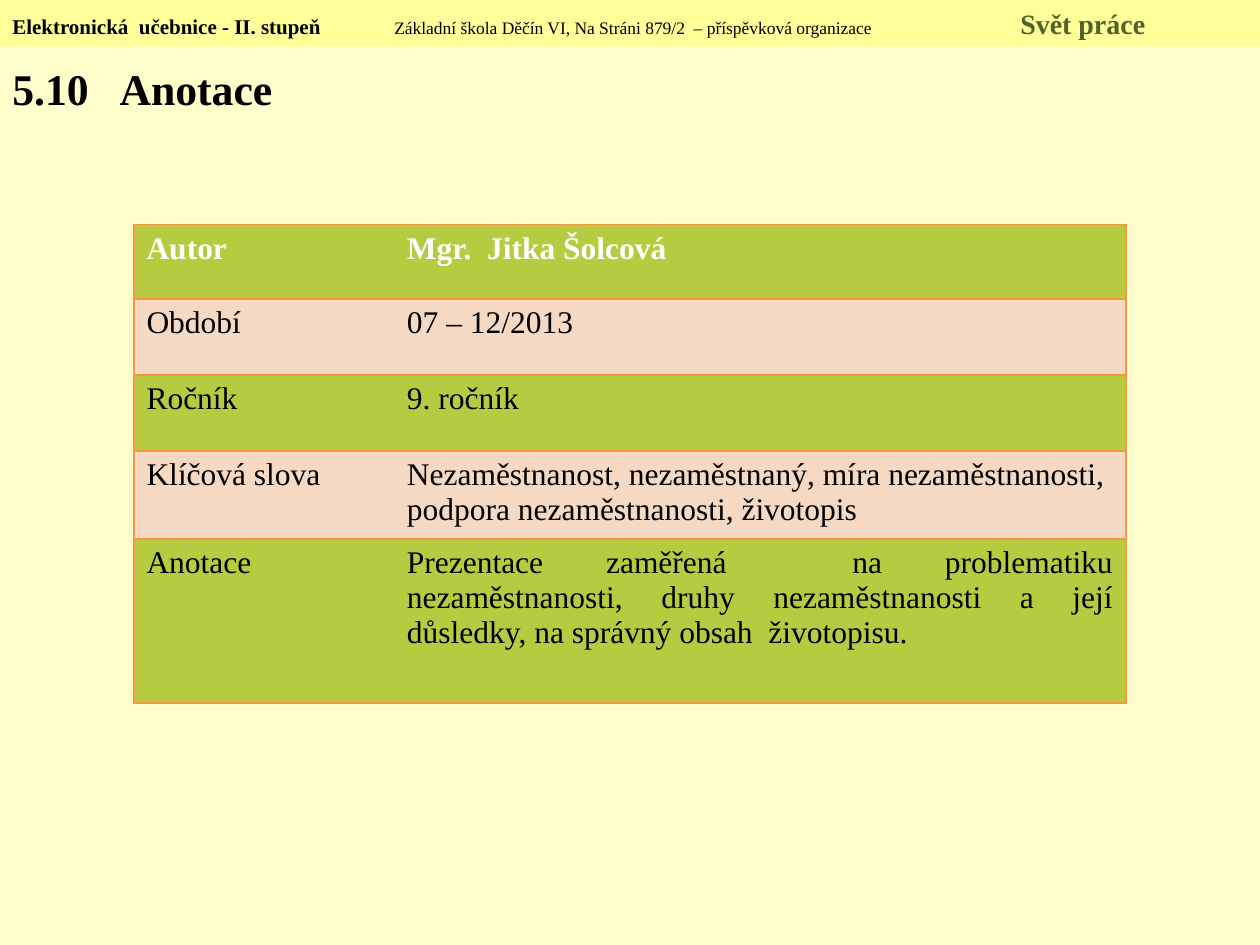
from lxml.etree import SubElement
from pptx import Presentation
from pptx.dml.color import RGBColor
from pptx.enum.shapes import MSO_SHAPE as Shape
from pptx.enum.text import MSO_ANCHOR as Anchor, PP_ALIGN as Align
from pptx.oxml.ns import qn
from pptx.util import Cm, Pt

COLORS = {
    "page": "FFFFCC", "band": "FFFF99", "text": "000000", "subject": "4F6228",
    "header": "FFFFFF", "green": "B7CB41", "peach": "F5D9C3", "border": "F79646",
}
FONT = "Times New Roman"
ROWS = [
    ("Autor", "Mgr.  Jitka Šolcová", 1.5),
    ("Období", "07 – 12/2013", 1.53),
    ("Ročník", "9. ročník", 1.53),
    ("Klíčová slova", "Nezaměstnanost, nezaměstnaný, míra nezaměstnanosti, "
     "podpora nezaměstnanosti, životopis", 1.78),
    ("Anotace", "Prezentace zaměřená  na problematiku nezaměstnanosti, druhy "
     "nezaměstnanosti a její důsledky, na správný obsah  životopisu.", 3.3),
]


def color(name):
    """Return the named colour."""
    return RGBColor.from_string(COLORS[name])


def add_span(para, text, size, bold=False, shade="text"):
    """Append one formatted run to a paragraph."""
    span = para.add_run()
    span.text = text
    span.font.name = FONT
    span.font.size = Pt(size)
    span.font.bold = bold
    span.font.color.rgb = color(shade)


def add_tabs(para, *stops):
    """Give a paragraph left tab stops, in centimetres."""
    tabs = SubElement(para._p.get_or_add_pPr(), qn("a:tabLst"))
    for stop in stops:
        SubElement(tabs, qn("a:tab"), pos=str(Cm(stop)), algn="l")


def add_header(page, left, top, width, height):
    """Draw the band with the book, school and subject."""
    band = page.shapes.add_shape(Shape.RECTANGLE, Cm(left), Cm(top), Cm(width), Cm(height))
    band.shadow.inherit = False
    band.fill.solid()
    band.fill.fore_color.rgb = color("band")
    band.line.fill.background()
    band.text_frame.vertical_anchor = Anchor.MIDDLE
    para = band.text_frame.paragraphs[0]
    para.alignment = Align.LEFT
    add_tabs(para, 7.7, 20.32)
    add_span(para, "Elektronická  učebnice - II. stupeň\t", 12, True)
    add_span(para, "Základní škola Děčín VI, Na Stráni 879/2  – příspěvková organizace\t", 10)
    add_span(para, "Svět práce", 16, True, "subject")


def add_title(page, left, top, width, height):
    """Write the numbered slide title."""
    box = page.shapes.add_textbox(Cm(left), Cm(top), Cm(width), Cm(height))
    box.text_frame.word_wrap = True
    box.text_frame.vertical_anchor = Anchor.MIDDLE
    para = box.text_frame.paragraphs[0]
    add_tabs(para, 2.16)
    add_span(para, "5.10\tAnotace", 25, True)


def add_borders(cell, sides):
    """Draw the given sides of a cell and clear the others."""
    for side in "LRTB":
        line = SubElement(cell._tc.get_or_add_tcPr(), qn(f"a:ln{side}"), w=str(Pt(1)))
        if side in sides:
            fill = SubElement(line, qn("a:solidFill"))
            SubElement(fill, qn("a:srgbClr"), val=COLORS["border"])
        else:
            SubElement(line, qn("a:noFill"))


def add_annotation(page, left, top, label_width, value_width):
    """Build the table of labels and values."""
    height = sum(row[2] for row in ROWS)
    table = page.shapes.add_table(
        len(ROWS), 2, Cm(left), Cm(top), Cm(label_width + value_width), Cm(height)).table
    table.columns[0].width = Cm(label_width)
    table.columns[1].width = Cm(value_width)
    for index, (label, value, row_height) in enumerate(ROWS):
        table.rows[index].height = Cm(row_height)
        first = index == 0
        for column, (text, sides) in enumerate([(label, "LTB"), (value, "RTB")]):
            cell = table.cell(index, column)
            add_borders(cell, sides)
            cell.fill.solid()
            cell.fill.fore_color.rgb = color("peach" if index % 2 else "green")
            para = cell.text_frame.paragraphs[0]
            add_span(para, text, 18, first, "header" if first else "text")
    para.alignment = Align.JUSTIFY


def main():
    """Build and save the slide."""
    deck = Presentation()
    deck.slide_width, deck.slide_height = Cm(25.4), Cm(19.05)
    page = deck.slides.add_slide(deck.slide_layouts[6])
    page.background.fill.solid()
    page.background.fill.fore_color.rgb = color("page")
    add_header(page, 0, 0, 25.4, 0.94)
    add_title(page, 0, 1.1, 25.4, 1.35)
    add_annotation(page, 2.7, 4.53, 5.25, 14.75)
    deck.save("out.pptx")


if __name__ == "__main__":
    main()
